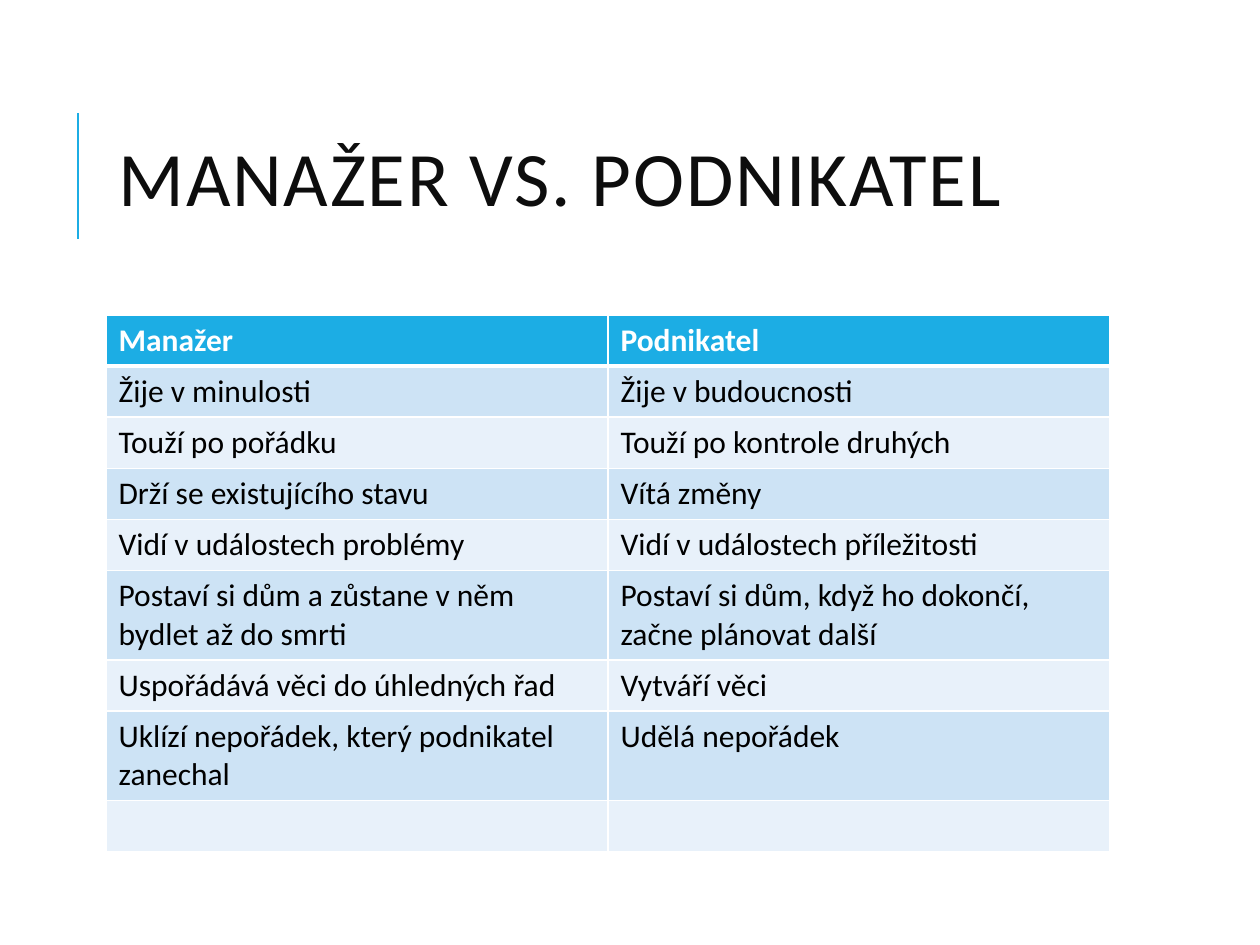
from dataclasses import dataclass
from typing import NamedTuple

from lxml.etree import SubElement
from pptx import Presentation
from pptx.dml.color import RGBColor
from pptx.enum.shapes import MSO_CONNECTOR as Connector
from pptx.enum.text import MSO_ANCHOR as Anchor, MSO_AUTO_SIZE as AutoSize, PP_ALIGN as Align
from pptx.oxml.ns import qn
from pptx.util import Emu, Pt

EMU_PER_PX = 914400 / 126


@dataclass(frozen=True)
class Theme:
    font: str = "Calibri"
    accent: str = "1CADE4"
    title: str = "0D0D0D"
    text: str = "000000"
    white: str = "FFFFFF"
    bands: tuple[str, str] = ("CDE3F5", "E8F1FA")
    title_size: int = 44
    table_size: int = 18
    title_tracking: int = 100  # hundredths of a point
    rule_width: float = 1.5
    grid_width: int = 1
    header_rule_width: int = 3


class Box(NamedTuple):
    left: int
    top: int
    width: int
    height: int


class Comparison(NamedTuple):
    manager: str
    entrepreneur: str


THEME = Theme()
TITLE_BOX = Box(106, 81, 1004, 207)
TABLE_BOX = Box(106, 315, 1004, 459)
COMPARISONS = [
    Comparison("Manažer", "Podnikatel"),
    Comparison("Žije v minulosti", "Žije v budoucnosti"),
    Comparison("Touží po pořádku", "Touží po kontrole druhých"),
    Comparison("Drží se existujícího stavu", "Vítá změny"),
    Comparison("Vidí v událostech problémy", "Vidí v událostech příležitosti"),
    Comparison("Postaví si dům a zůstane v něm bydlet až do smrti",
               "Postaví si dům, když ho dokončí, začne plánovat další"),
    Comparison("Uspořádává věci do úhledných řad", "Vytváří věci"),
    Comparison("Uklízí nepořádek, který podnikatel zanechal", "Udělá nepořádek"),
    Comparison("", ""),
]


def px(length: int) -> Emu:
    return Emu(round(length * EMU_PER_PX))


def color(value: str) -> RGBColor:
    return RGBColor.from_string(value)


def add_run(paragraph, text: str, size: int, fill: str, bold: bool = False):
    run = paragraph.add_run()
    run.text = text
    font = run.font
    font.name, font.size, font.bold = THEME.font, Pt(size), bold
    font.color.rgb = color(fill)
    return run


def add_title(slide, text: str, box: Box) -> None:
    title = slide.shapes.title
    title.left, title.top, title.width, title.height = map(px, box)
    frame = title.text_frame
    frame.word_wrap = True
    frame.auto_size = AutoSize.NONE
    frame.vertical_anchor = Anchor.MIDDLE
    paragraph = frame.paragraphs[0]
    paragraph.alignment = Align.LEFT
    paragraph.line_spacing = 0.8
    run = add_run(paragraph, text, THEME.title_size, THEME.title)
    run._r.get_or_add_rPr().set("spc", str(THEME.title_tracking))


def add_title_rule(slide, x: int, top: int, bottom: int) -> None:
    rule = slide.shapes.add_connector(Connector.STRAIGHT, px(x), px(bottom), px(x), px(top))
    rule.line.color.rgb = color(THEME.accent)
    rule.line.width = Pt(THEME.rule_width)
    SubElement(rule._element.spPr, qn("a:effectLst"))


def set_borders(cell, top: int, bottom: int) -> None:
    """Draw white cell edges; call before filling, as the schema puts edges first."""
    properties = cell._tc.get_or_add_tcPr()
    widths = {"L": THEME.grid_width, "R": THEME.grid_width, "T": top, "B": bottom}
    for side, width in widths.items():
        edge = SubElement(properties, qn(f"a:ln{side}"), w=str(Pt(width)))
        fill = SubElement(edge, qn("a:solidFill"))
        SubElement(fill, qn("a:srgbClr"), val=THEME.white)


def add_comparison_table(slide, rows: list[Comparison], box: Box) -> None:
    table = slide.shapes.add_table(len(rows), len(Comparison._fields), *map(px, box)).table
    for row_index, row in enumerate(rows):
        is_header = row_index == 0
        band = THEME.accent if is_header else THEME.bands[(row_index - 1) % 2]
        top = THEME.header_rule_width if row_index == 1 else THEME.grid_width
        bottom = THEME.header_rule_width if is_header else THEME.grid_width
        for column_index, text in enumerate(row):
            cell = table.cell(row_index, column_index)
            set_borders(cell, top, bottom)
            cell.fill.solid()
            cell.fill.fore_color.rgb = color(band)
            if text:
                add_run(cell.text_frame.paragraphs[0], text, THEME.table_size,
                        THEME.white if is_header else THEME.text, is_header)


def main() -> None:
    presentation = Presentation()
    presentation.slide_width, presentation.slide_height = px(1260), px(945)
    title_only = presentation.slide_layouts[5]
    slide = presentation.slides.add_slide(title_only)
    add_title_rule(slide, x=78, top=113, bottom=239)
    add_title(slide, "MANAŽER VS. PODNIKATEL", TITLE_BOX)
    add_comparison_table(slide, COMPARISONS, TABLE_BOX)
    presentation.save("out.pptx")


if __name__ == "__main__":
    main()
